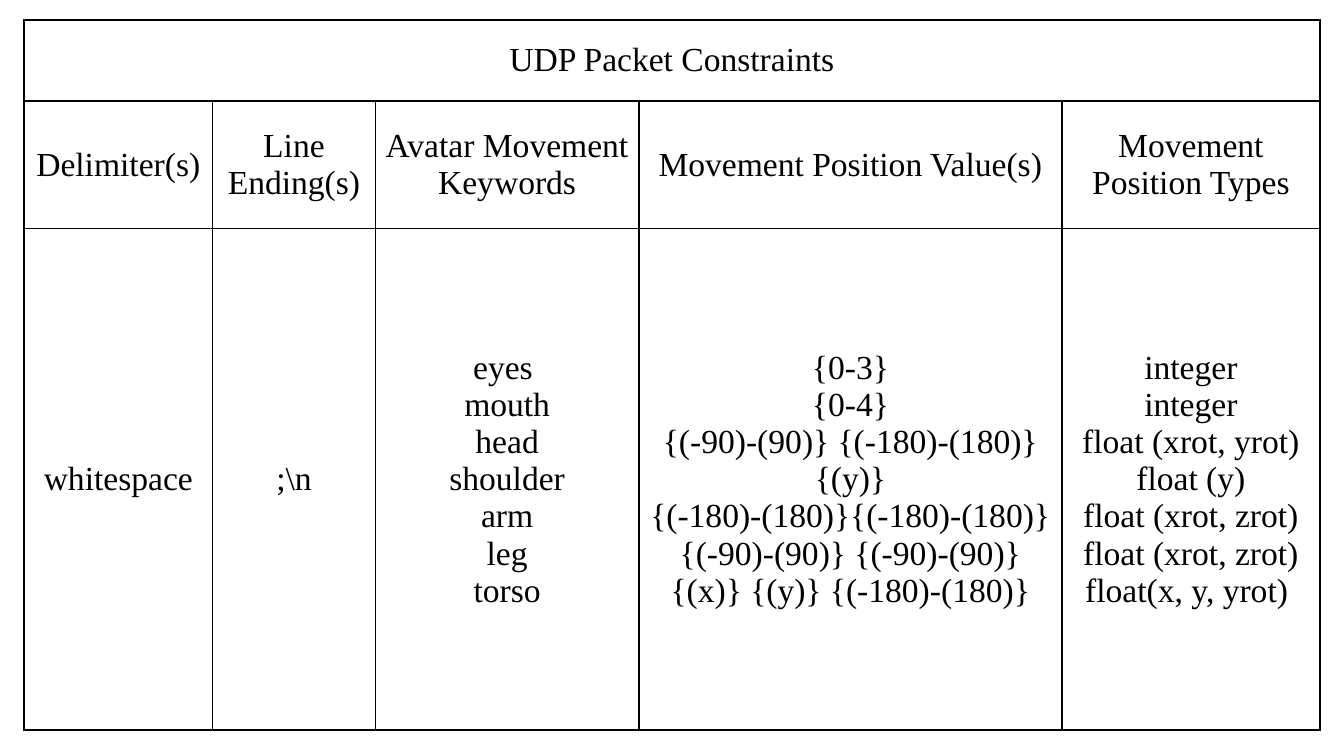
from dataclasses import dataclass

import pptx
import pptx.dml.color
import pptx.enum.text
import pptx.oxml
import pptx.oxml.ns
import pptx.util

Pt = pptx.util.Pt


@dataclass(frozen=True)
class Theme:
    font: str = "Times New Roman"
    size: int = 18
    ink: str = "000000"
    paper: str = "FFFFFF"
    border: int = 1
    inset: int = 5


theme = Theme()
ink = pptx.dml.color.RGBColor.from_string(theme.ink)
paper = pptx.dml.color.RGBColor.from_string(theme.paper)

TITLE = "UDP Packet Constraints"
HEADINGS = [
    "Delimiter(s)",
    "Line Ending(s)",
    "Avatar Movement Keywords",
    "Movement Position Value(s)",
    "Movement Position Types",
]
MOVEMENTS = [
    ("eyes ", "{0-3}", "integer"),
    ("mouth", "{0-4}", "integer"),
    ("head", "{(-90)-(90)} {(-180)-(180)}", "float (xrot, yrot)"),
    ("shoulder", "{(y)}", "float (y)"),
    ("arm", "{(-180)-(180)}{(-180)-(180)}", "float (xrot, zrot)"),
    ("leg", "{(-90)-(90)} {(-90)-(90)}", "float (xrot, zrot)"),
    ("torso", "{(x)} {(y)} {(-180)-(180)}", "float(x, y, yrot) "),
]
COLUMN_WIDTHS = [100.8, 87.4, 141, 226.8, 138]
ROW_HEIGHTS = [43.2, 68.4, 268.8]


def add_borders(cell):
    properties = cell._tc.get_or_add_tcPr()
    for side in "LRTB":
        properties.append(pptx.oxml.parse_xml(
            f'<a:ln{side} {pptx.oxml.ns.nsdecls("a")} w="{Pt(theme.border)}">'
            f'<a:solidFill><a:srgbClr val="{theme.ink}"/></a:solidFill>'
            f'</a:ln{side}>'
        ))


presentation = pptx.Presentation()
presentation.slide_width = Pt(720)
presentation.slide_height = Pt(405)
slide = presentation.slides.add_slide(presentation.slide_layouts[6])

table = slide.shapes.add_table(
    len(ROW_HEIGHTS), len(COLUMN_WIDTHS), Pt(13), Pt(10.8),
    Pt(sum(COLUMN_WIDTHS)), Pt(sum(ROW_HEIGHTS)),
).table
table.first_row = False
table.horz_banding = False
for column, width in zip(table.columns, COLUMN_WIDTHS):
    column.width = Pt(width)
for row, height in zip(table.rows, ROW_HEIGHTS):
    row.height = Pt(height)
table.cell(0, 0).merge(table.cell(0, len(COLUMN_WIDTHS) - 1))

movement_columns = ["\n".join(entries) for entries in zip(*MOVEMENTS)]
contents = [
    [TITLE] + [""] * (len(COLUMN_WIDTHS) - 1),
    HEADINGS,
    ["whitespace", r";\n", *movement_columns],
]
for row, texts in zip(table.rows, contents):
    for cell, text in zip(row.cells, texts):
        add_borders(cell)
        cell.fill.solid()
        cell.fill.fore_color.rgb = paper
        cell.vertical_anchor = pptx.enum.text.MSO_ANCHOR.MIDDLE
        cell.margin_left = cell.margin_right = Pt(theme.inset)
        cell.margin_top = cell.margin_bottom = Pt(theme.inset)
        cell.text_frame.text = text
        for paragraph in cell.text_frame.paragraphs:
            paragraph.alignment = pptx.enum.text.PP_ALIGN.CENTER
            for run in paragraph.runs:
                run.font.name = theme.font
                run.font.size = Pt(theme.size)
                run.font.color.rgb = ink

presentation.save("out.pptx")
